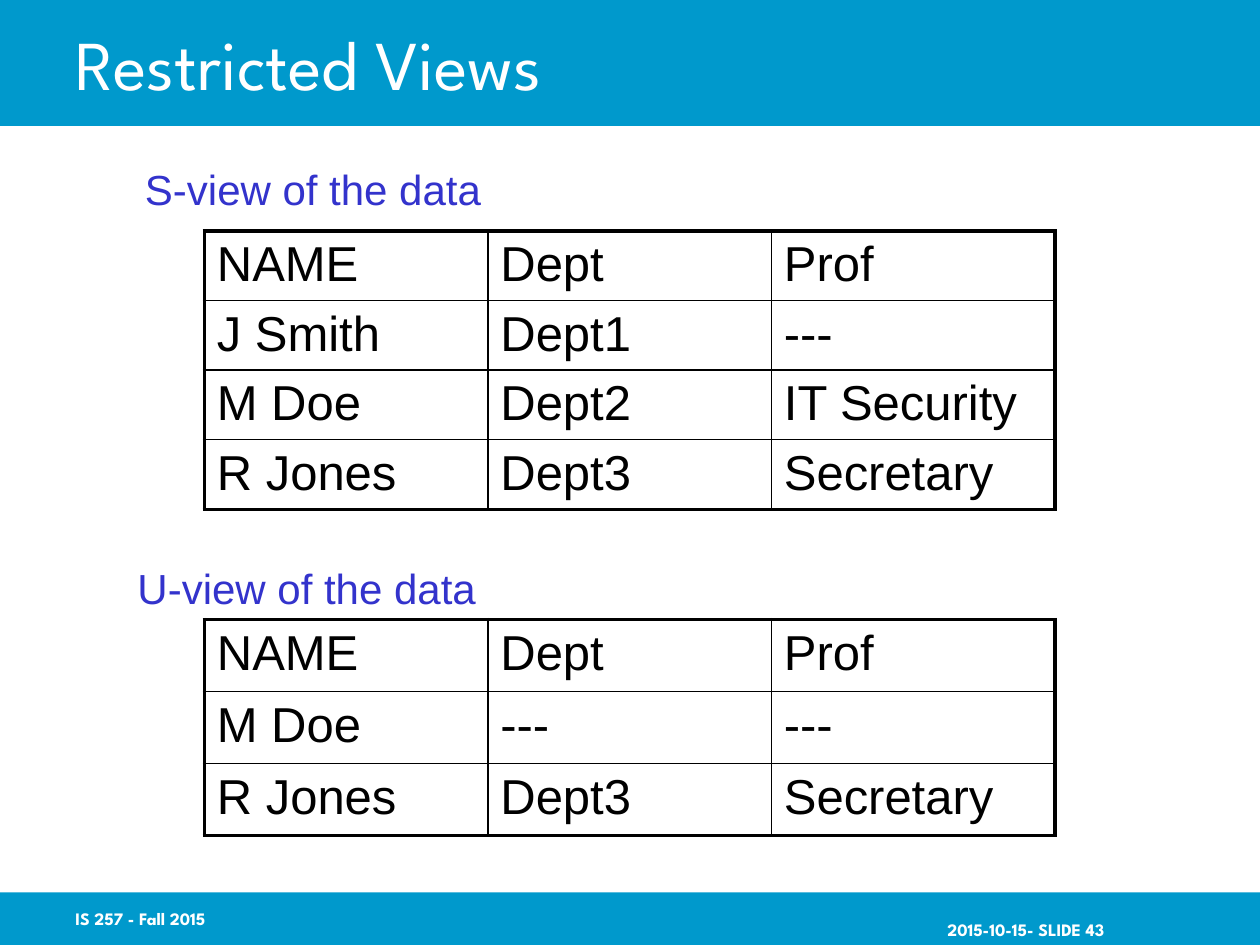
from lxml.etree import SubElement
from pptx import Presentation
from pptx.dml.color import RGBColor
from pptx.enum.shapes import MSO_SHAPE
from pptx.enum.text import MSO_ANCHOR, PP_ALIGN
from pptx.oxml.ns import qn
from pptx.util import Pt

COLORS = {"band": "0099CC", "white": "FFFFFF", "caption": "3333CC", "black": "000000"}
HEADING_FONT = "League Spartan"
BODY_FONT = "Arial"
OUTER_LINE, INNER_LINE = 2.25, 1


class SlideBuilder:
    def __init__(self, slide):
        self.slide = slide

    def color(self, name):
        return RGBColor.from_string(COLORS[name])

    def style(self, paragraph, size, font, color, bold=False):
        paragraph.font.size = Pt(size)
        paragraph.font.name = font
        paragraph.font.bold = bold
        paragraph.font.color.rgb = self.color(color)

    def band(self, top, height):
        shape = self.slide.shapes.add_shape(
            MSO_SHAPE.RECTANGLE, Pt(0), Pt(top), Pt(720), Pt(height))
        shape.shadow.inherit = False
        shape.fill.solid()
        shape.fill.fore_color.rgb = self.color("band")
        shape.line.fill.background()

    def text(self, text, box, size, font, color, bold=False, align=PP_ALIGN.LEFT,
             anchor=MSO_ANCHOR.MIDDLE, wrap=True, margin_top=3.6, margin_right=7.2):
        shape = self.slide.shapes.add_textbox(*map(Pt, box))
        frame = shape.text_frame
        frame.word_wrap = wrap
        frame.vertical_anchor = anchor
        frame.margin_top = Pt(margin_top)
        frame.margin_right = Pt(margin_right)
        paragraph = frame.paragraphs[0]
        paragraph.text = text
        paragraph.alignment = align
        self.style(paragraph, size, font, color, bold)

    def caption(self, text, left, top, width):
        self.text(text, (left, top, width, 36), 24, BODY_FONT, "caption",
                  align=PP_ALIGN.CENTER, anchor=MSO_ANCHOR.TOP, wrap=False)

    def borders(self, cell, widths):
        properties = cell._tc.get_or_add_tcPr()
        for side, width in widths.items():
            line = SubElement(properties, qn(f"a:ln{side}"), w=str(Pt(width)))
            fill = SubElement(line, qn("a:solidFill"))
            SubElement(fill, qn("a:srgbClr"), val=COLORS["black"])

    def table(self, rows, top, row_height):
        last_row, last_column = len(rows) - 1, len(rows[0]) - 1
        table = self.slide.shapes.add_table(
            len(rows), len(rows[0]), Pt(116.75), Pt(top),
            Pt(486), Pt(row_height * len(rows))).table
        table.first_row = False
        table.horz_banding = False
        for row, values in enumerate(rows):
            table.rows[row].height = Pt(row_height)
            for column, value in enumerate(values):
                cell = table.cell(row, column)
                edges = {"L": column == 0, "R": column == last_column,
                         "T": row == 0, "B": row == last_row}
                self.borders(cell, {side: OUTER_LINE if outer else INNER_LINE
                                    for side, outer in edges.items()})
                cell.fill.background()
                cell.margin_bottom = Pt(2.5)
                cell.text = value
                self.style(cell.text_frame.paragraphs[0], 28, BODY_FONT, "black")


def main():
    presentation = Presentation()
    presentation.slide_width = Pt(720)
    presentation.slide_height = Pt(540)
    builder = SlideBuilder(presentation.slides.add_slide(presentation.slide_layouts[6]))

    builder.band(0, 72)
    builder.band(510, 30)
    builder.text("2015-10-15- SLIDE 43", (534, 510, 150, 30), 10, HEADING_FONT, "white",
                 bold=True, align=PP_ALIGN.RIGHT, margin_top=16.2, margin_right=53)
    builder.text("IS 257 - Fall 2015", (36, 510, 150, 30), 10, HEADING_FONT, "white",
                 bold=True)
    builder.text("Restricted Views", (36, 0, 612, 72), 40, HEADING_FONT, "white")

    header = ("NAME", "Dept", "Prof")
    builder.table([header,
                   ("J Smith", "Dept1", "---"),
                   ("M Doe", "Dept2", "IT Security"),
                   ("R Jones", "Dept3", "Secretary")], 132, 38.5)
    builder.table([header,
                   ("M Doe", "---", "---"),
                   ("R Jones", "Dept3", "Secretary")], 354, 41.2)
    builder.caption("S-view of the data", 75.6, 90, 206.6)
    builder.caption("U-view of the data", 71.3, 318, 208)

    presentation.save("out.pptx")


if __name__ == "__main__":
    main()
